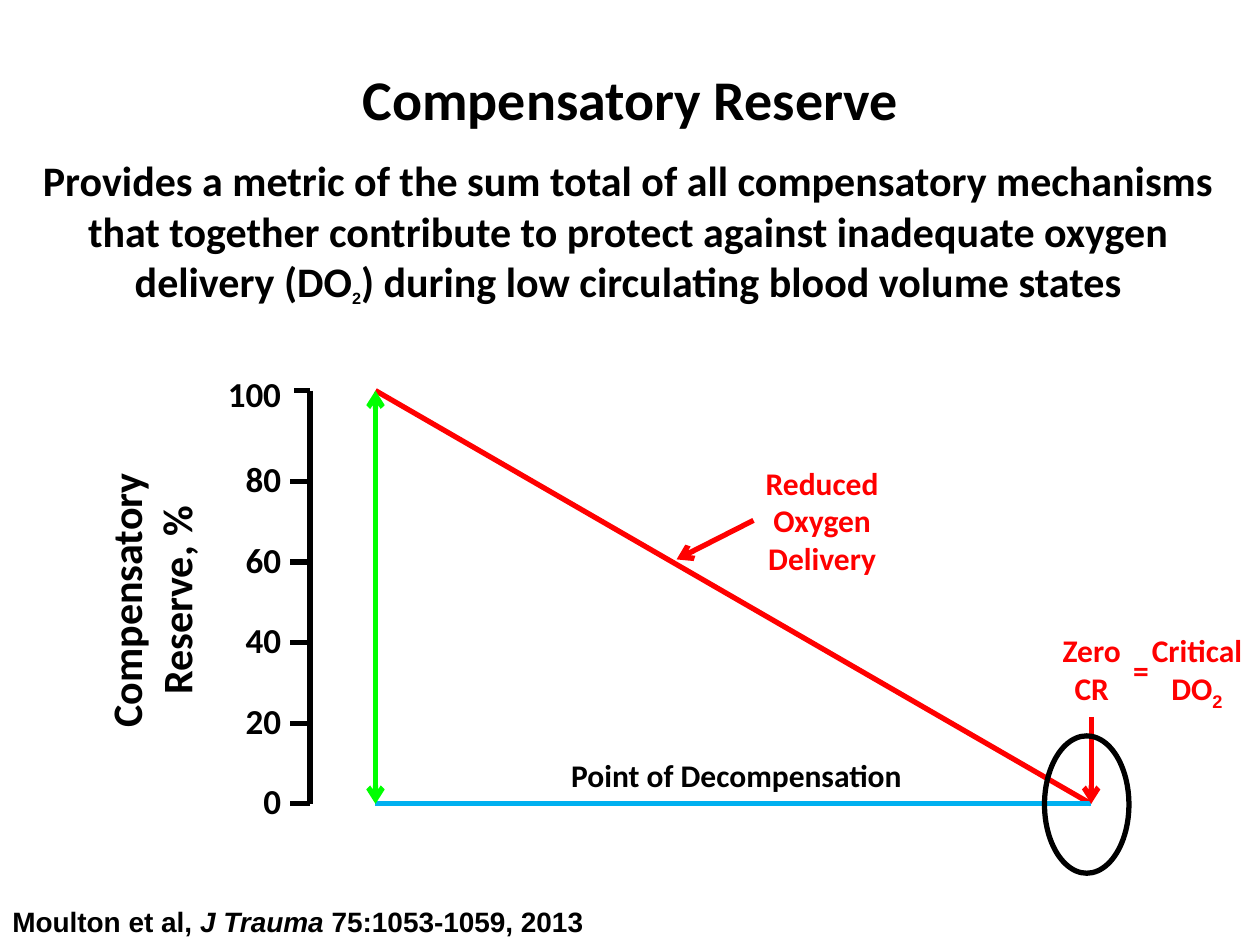
"""Build the Compensatory Reserve slide on a grid of 100 columns by 75 rows."""
import pptx
import pptx.dml.color
import pptx.enum.shapes
import pptx.enum.text
import pptx.oxml
import pptx.oxml.ns
import pptx.util

COLUMNS, ROWS = 100, 75
THEME = {
    "colours": {"black": "000000", "red": "FF0000", "green": "00FF00", "blue": "00B0F0"},
    "sizes": {"title": 32, "body": 24, "scale": 20, "label": 18, "source": 16},
    "fonts": {"main": "Calibri", "source": "Arial"},
    "line": 3,
}
ALIGN = pptx.enum.text.PP_ALIGN
SUBSCRIPT = {"font": "source", "baseline": "-25000"}

TITLE = ("Compensatory Reserve", (27.6, 4.6, 44.9, 6.4))
SCALE = ("100", "80", "60", "40", "20", "0")
SCALE_BOX = (16.3, 29.1, 7, 36.7)
SCALE_GAPS = (0, 24.4, 22, 22, 22, 22)
AXIS, START, END = 24.6, 29.8, 86.6
TOP, BOTTOM, TICK_STEP = 31, 63.8, 6.4
TICK_LEFT, TOP_TICK_LEFT = 23, 23.3
ELLIPSE = (82.9, 58.4, 6.7, 10.9)

LINES = [
    ((START, TOP), (END, BOTTOM), "red", ()),
    ((START, BOTTOM), (END, BOTTOM), "blue", ()),
    ((START, TOP), (START, BOTTOM), "green", ("headEnd", "tailEnd")),
    ((AXIS, TOP), (AXIS, BOTTOM), "black", ()),
    ((AXIS, TOP), (TOP_TICK_LEFT, TOP), "black", ()),
    ((59.8, 41.3), (53.7, 44.4), "red", ("tailEnd",)),
    ((END, 56.9), (END, BOTTOM), "red", ("tailEnd",)),
] + [
    ((AXIS, BOTTOM - TICK_STEP * step), (TICK_LEFT, BOTTOM - TICK_STEP * step), "black", ())
    for step in range(len(SCALE) - 1)
]

TEXTS = [
    {"box": (44.2, 59.5, 28.5, 4), "paragraphs": [[("Point of Decompensation", {})]]},
    {"box": (-2.2, 43.1, 28.4, 9.1), "size": "body", "wrap": True, "rotation": 270,
     "paragraphs": [[("Compensatory Reserve, %", {})]]},
    {"box": (59.7, 36.3, 11.1, 10.1), "colour": "red",
     "paragraphs": [[("Reduced", {})], [("Oxygen", {})], [("Delivery", {})]]},
    {"box": (0, 71.3, 47.9, 3.7), "size": "source", "font": "source", "align": ALIGN.LEFT,
     "paragraphs": [[("Moulton et al, ", {}), ("J Trauma ", {"italic": True}),
                     ("75:1053-1059, 2013", {})]]},
    {"box": (1.9, 11.8, 95.9, 13.1), "size": "body", "wrap": True,
     "paragraphs": [[("Provides a metric of the sum total of all compensatory mechanisms that together "
                      "contribute to protect against inadequate oxygen delivery (DO", {}),
                     ("2", {**SUBSCRIPT, "size": "source"}),
                     (") during low circulating blood volume states", {})]]},
    {"box": (83.3, 49.6, 6.7, 7.1), "colour": "red", "paragraphs": [[("Zero", {})], [("CR", {})]]},
    {"box": (90, 49.6, 10, 7.1), "colour": "red", "wrap": True,
     "paragraphs": [[("Critical", {})], [("DO", {}), ("2", SUBSCRIPT)]]},
    {"box": (88.9, 51.2, 3.3, 4), "colour": "red", "paragraphs": [[("=", {})]]},
    {"box": SCALE_BOX, "size": "scale", "align": ALIGN.RIGHT, "gaps": SCALE_GAPS,
     "paragraphs": [[(value, {})] for value in SCALE]},
]


def colour(name):
    return pptx.dml.color.RGBColor.from_string(THEME["colours"][name])


def place(presentation, box):
    column = presentation.slide_width / COLUMNS
    row = presentation.slide_height / ROWS
    return [round(value * unit) for value, unit in zip(box, (column, row) * 2)]


def write(shape, item):
    frame = shape.text_frame
    frame.word_wrap = item.get("wrap", False)
    frame.auto_size = pptx.enum.text.MSO_AUTO_SIZE.NONE
    frame.vertical_anchor = pptx.enum.text.MSO_ANCHOR.TOP
    shape.rotation = item.get("rotation", 0)
    for index, pieces in enumerate(item["paragraphs"]):
        paragraph = frame.add_paragraph() if index else frame.paragraphs[0]
        paragraph.alignment = item.get("align", ALIGN.CENTER)
        if "gaps" in item:
            paragraph.space_before = pptx.util.Pt(item["gaps"][index])
        for text, changes in pieces:
            style = {"size": "label", "font": "main", "colour": "black", **item, **changes}
            run = paragraph.add_run()
            run.text = text
            run.font.name = THEME["fonts"][style["font"]]
            run.font.size = pptx.util.Pt(THEME["sizes"][style["size"]])
            run.font.bold = True
            run.font.italic = style.get("italic", False)
            run.font.color.rgb = colour(style["colour"])
            if "baseline" in style:
                run.font._element.set("baseline", style["baseline"])


def add_line(presentation, slide, start, end, line_colour, arrowheads):
    connector = slide.shapes.add_connector(
        pptx.enum.shapes.MSO_CONNECTOR.STRAIGHT, *place(presentation, start + end))
    connector.line.color.rgb = colour(line_colour)
    connector.line.width = pptx.util.Pt(THEME["line"])
    properties = connector._element.spPr
    for tag in arrowheads:
        arrowhead = pptx.oxml.parse_xml(f'<a:{tag} {pptx.oxml.ns.nsdecls("a")} type="arrow"/>')
        connector.line._get_or_add_ln().append(arrowhead)
    properties.append(pptx.oxml.parse_xml(f'<a:effectLst {pptx.oxml.ns.nsdecls("a")}/>'))


def main():
    presentation = pptx.Presentation()
    presentation.slide_width = pptx.util.Inches(10)
    presentation.slide_height = pptx.util.Inches(7.5)
    slide = presentation.slides.add_slide(presentation.slide_layouts[5])

    title = slide.shapes.title
    text, box = TITLE
    title.left, title.top, title.width, title.height = place(presentation, box)
    write(title, {"size": "title", "paragraphs": [[(text, {})]]})

    for line in LINES:
        add_line(presentation, slide, *line)

    ellipse = slide.shapes.add_shape(
        pptx.enum.shapes.MSO_SHAPE.OVAL, *place(presentation, ELLIPSE))
    ellipse.shadow.inherit = False
    ellipse.fill.background()
    ellipse.line.color.rgb = colour("black")
    ellipse.line.width = pptx.util.Pt(THEME["line"])

    for item in TEXTS:
        write(slide.shapes.add_textbox(*place(presentation, item["box"])), item)

    presentation.save("out.pptx")


if __name__ == "__main__":
    main()
